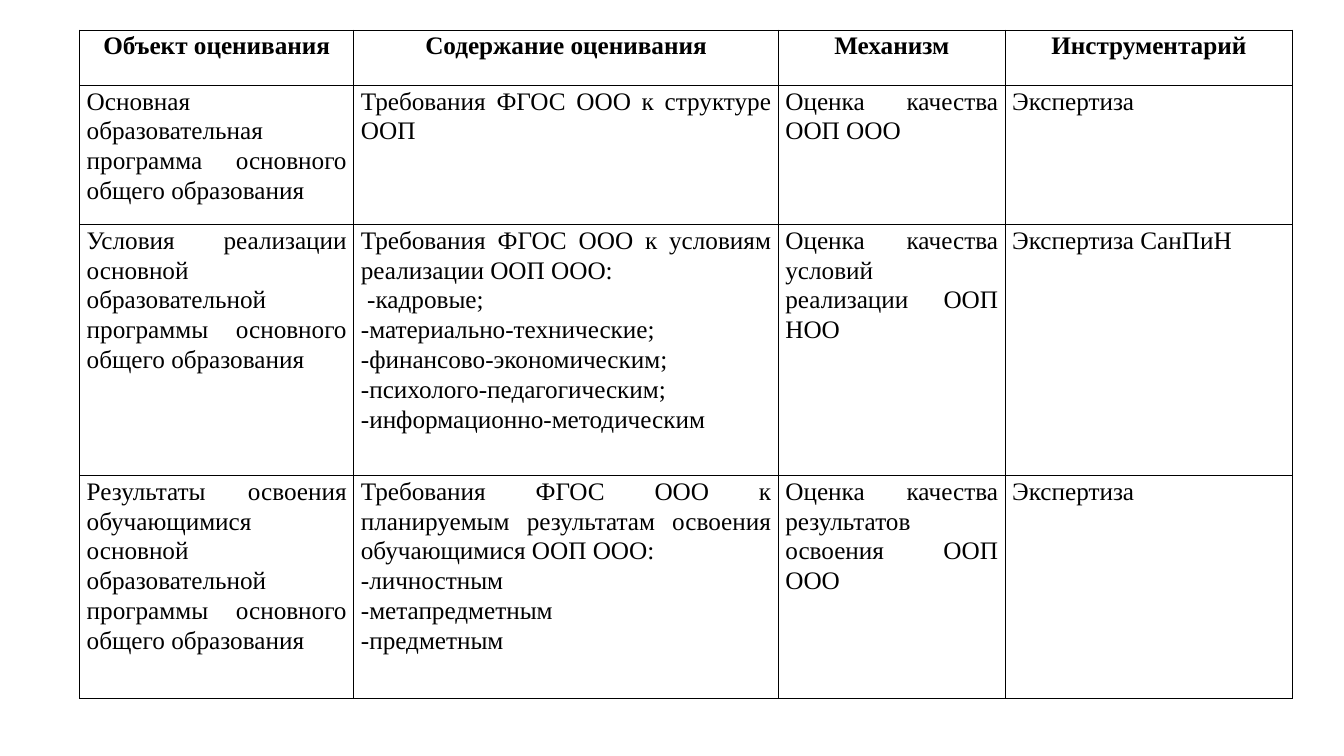
from lxml.etree import SubElement
from pptx import Presentation
from pptx.dml.color import RGBColor
from pptx.enum.text import MSO_ANCHOR, PP_ALIGN
from pptx.oxml.ns import qn
from pptx.util import Pt

PX = 9144
BLACK = "000000"
COL_WIDTHS = [272, 421, 225, 285]
ROW_HEIGHTS = [55, 138, 249, 221]
ROWS = [
    ["Объект оценивания", "Содержание оценивания", "Механизм", "Инструментарий"],
    [
        "Основная образовательная программа основного общего образования",
        "Требования ФГОС ООО к структуре ООП",
        "Оценка качества ООП ООО",
        "Экспертиза",
    ],
    [
        "Условия реализации основной образовательной программы основного общего образования",
        "Требования ФГОС ООО к условиям реализации ООП ООО:\n"
        " -кадровые;\n"
        "-материально-технические;\n"
        "-финансово-экономическим;\n"
        "-психолого-педагогическим;\n"
        "-информационно-методическим",
        "Оценка качества условий реализации ООП НОО",
        "Экспертиза СанПиН",
    ],
    [
        "Результаты освоения обучающимися основной образовательной программы "
        "основного общего образования",
        "Требования ФГОС ООО к планируемым результатам освоения обучающимися ООП ООО:\n"
        "-личностным\n"
        "-метапредметным\n"
        "-предметным",
        "Оценка качества результатов освоения ООП ООО",
        "Экспертиза",
    ],
]


def px(n):
    """Turn pixels into EMU."""
    return n * PX


def rgb(color):
    """Turn a hex string into a colour."""
    return RGBColor.from_string(color)


def write(tf, text, size=18, bold=False, align=PP_ALIGN.JUSTIFY, color=BLACK):
    """Write one paragraph for each line of text."""
    for i, line in enumerate(text.split("\n")):
        p = tf.add_paragraph() if i else tf.paragraphs[0]
        p.alignment, p.line_spacing = align, 1.07
        r = p.add_run()
        r.text = line
        r.font.name, r.font.size, r.font.bold = "Times New Roman", Pt(size), bold
        r.font.color.rgb = rgb(color)


def set_borders(cell, color=BLACK, width=1):
    """Draw a solid line on the four sides of a cell."""
    tc_pr = cell._tc.get_or_add_tcPr()
    for i, side in enumerate(["lnL", "lnR", "lnT", "lnB"]):
        ln = tc_pr.makeelement(qn(f"a:{side}"), {"w": str(Pt(width))})
        fill = SubElement(ln, qn("a:solidFill"))
        SubElement(fill, qn("a:srgbClr"), val=color)
        tc_pr.insert(i, ln)


def format_cell(cell):
    """Set the margins, fill and borders of a cell."""
    cell.margin_left = cell.margin_right = px(7)
    cell.margin_top = cell.margin_bottom = 0
    cell.vertical_anchor = MSO_ANCHOR.TOP
    cell.fill.background()
    set_borders(cell)


def add_grid(s, left, top, rows, widths, heights):
    """Add a table whose first row is a bold centred header."""
    table = s.shapes.add_table(
        len(rows), len(widths), px(left), px(top), px(sum(widths)), px(sum(heights))
    ).table
    table.horz_banding = False
    for col, width in zip(table.columns, widths):
        col.width = px(width)
    for i, (row, height, texts) in enumerate(zip(table.rows, heights, rows)):
        row.height = px(height)
        align = PP_ALIGN.JUSTIFY if i else PP_ALIGN.CENTER
        for cell, text in zip(row.cells, texts):
            format_cell(cell)
            write(cell.text_frame, text, bold=i == 0, align=align)


def main():
    """Build the slide with the assessment table."""
    prs = Presentation()
    prs.slide_width, prs.slide_height = px(1333), px(750)
    s = prs.slides.add_slide(prs.slide_layouts[6])
    add_grid(s, 79, 30, ROWS, COL_WIDTHS, ROW_HEIGHTS)
    prs.save("out.pptx")


if __name__ == "__main__":
    main()
